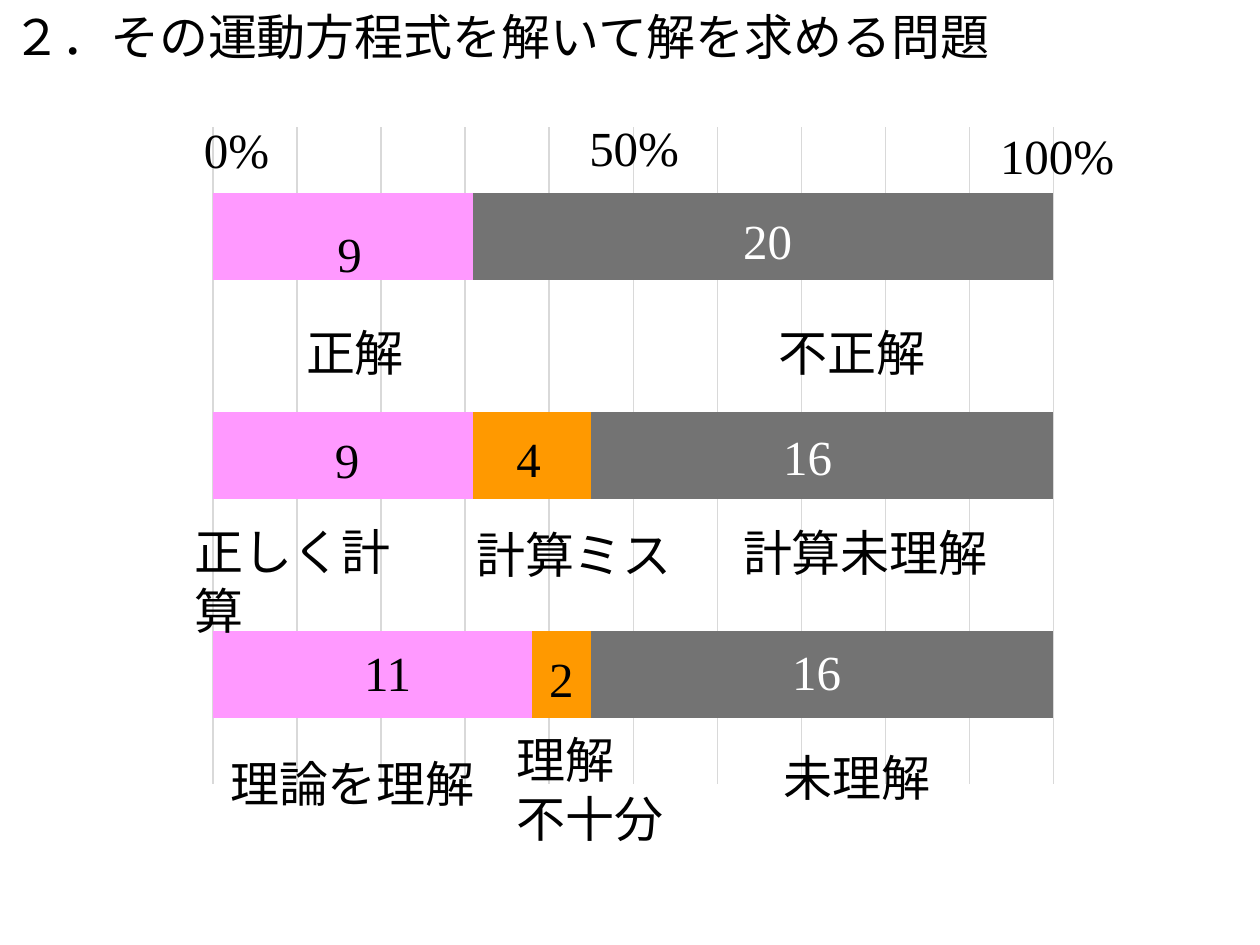
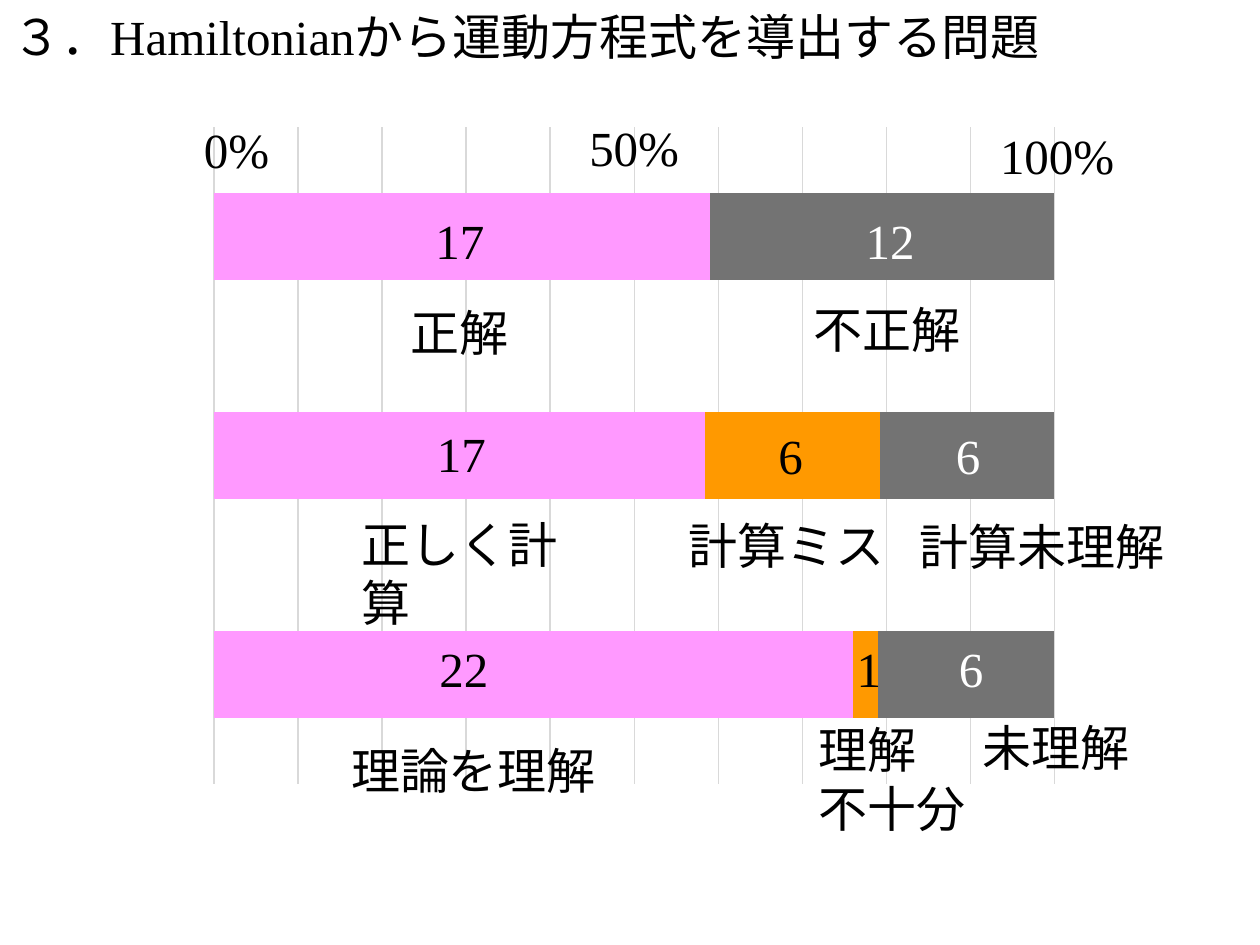
from pptx import Presentation
from pptx.chart.data import CategoryChartData
from pptx.dml.color import RGBColor
from pptx.enum.chart import XL_CHART_TYPE
from pptx.enum.lang import MSO_LANGUAGE_ID
from pptx.enum.text import MSO_AUTO_SIZE
from pptx.util import Cm, Pt

FONT = "Times New Roman"
BLACK, WHITE, GRID = "000000", "FFFFFF", "D9D9D9"
SERIES_COLOURS = ["FF99FF", "FF9900", "737373"]
BAR_NAMES = ["1", "2", "3"]

# Text and width of each answer label, bar by bar from the top
ANSWERS = [
    ("正解", 2.92), ("不正解", 3.99),
    ("正しく計算", 5.13), ("計算ミス", 4.57), ("計算未理解", 5.66),
    ("理論を理解", 6.4), ("理解\n不十分", 4.57), ("未理解", 3.78),
]
# Text, left, top and width of the scale marks
SCALE = [("0%", 3.86, 2.29, 2.21), ("50%", 11.63, 2.24, 2.72),
         ("100%", 19.91, 2.41, 3.02)]

# Shares run from the bottom bar up; counts are text, left, top from the top bar down
QUESTIONS = [
    dict(
        title="２．その運動方程式を解いて解を求める問題",
        chart_left=3.94,
        shares=[(38, 31, 31), (7, 14, 0), (55, 55, 69)],
        counts=[
            [("9", 6.55, 4.39), ("20", 14.73, 4.11)],
            [("9", 6.5, 8.53), ("4", 10.16, 8.51), ("16", 15.54, 8.48)],
            [("11", 7.09, 12.83), ("2", 10.82, 12.95), ("16", 15.72, 12.8)],
        ],
        answer_places=[
            (5.92, 6.38), (15.44, 6.38),
            (3.68, 10.39), (9.35, 10.44), (14.73, 10.41),
            (4.39, 15.06), (10.16, 14.58), (15.54, 14.94),
        ],
    ),
    dict(
        title="３．Hamiltonianから運動方程式を導出する問題",
        chart_left=3.96,
        shares=[(76, 59, 59), (3, 21, 0), (21, 21, 41)],
        counts=[
            [("17", 8.53, 4.11), ("12", 17.2, 4.11)],
            [("17", 8.56, 8.41), ("6", 15.44, 8.46), ("6", 19.02, 8.46)],
            [("22", 8.61, 12.75), ("1", 17.02, 12.75), ("6", 19.08, 12.75)],
        ],
        answer_places=[
            (8.03, 5.97), (16.15, 5.92),
            (7.04, 10.24), (13.64, 10.26), (18.29, 10.29),
            (6.83, 14.81), (16.26, 14.38), (19.56, 14.33),
        ],
    ),
]


def colour(hex_string):
    return RGBColor.from_string(hex_string)


def write(frame, text, size=28, ink=BLACK, font=FONT):
    """Fill a text frame, one paragraph for each line of text."""
    for number, line in enumerate(text.split("\n")):
        para = frame.add_paragraph() if number else frame.paragraphs[0]
        span = para.add_run()
        span.text = line
        span.font.name = font
        span.font.size = Pt(size)
        span.font.color.rgb = colour(ink)
        span.font.language_id = MSO_LANGUAGE_ID.JAPANESE


class SurveyDeck:
    def __init__(self):
        self.deck = Presentation()
        self.deck.slide_width, self.deck.slide_height = Cm(25.4), Cm(19.05)
        self.page = None

    def new_page(self):
        self.page = self.deck.slides.add_slide(self.deck.slide_layouts[6])

    def label(self, text, left, top, width, **style):
        height = 1.45 + 1.19 * text.count("\n")
        box = self.page.shapes.add_textbox(Cm(left), Cm(top), Cm(width), Cm(height))
        box.text_frame.word_wrap = True
        box.text_frame.auto_size = MSO_AUTO_SIZE.SHAPE_TO_FIT_TEXT
        write(box.text_frame, text, **style)

    def bars(self, left, shares):
        data = CategoryChartData()
        data.categories = BAR_NAMES
        for number, values in enumerate(shares, 1):
            data.add_series(f"Series {number}", values)
        chart = self.page.shapes.add_chart(
            XL_CHART_TYPE.BAR_STACKED_100, Cm(left), Cm(2.29), Cm(17.65), Cm(13.79), data
        ).chart
        chart.has_legend = chart.has_title = False
        chart.font.name, chart.font.size = FONT, Pt(10)
        chart.font.color.rgb = colour(BLACK)

        chart.category_axis.visible = chart.value_axis.visible = False
        chart.value_axis.has_major_gridlines = True
        grid = chart.value_axis.major_gridlines.format.line
        grid.color.rgb, grid.width = colour(GRID), Pt(0.75)

        plot = chart.plots[0]
        plot.gap_width, plot.overlap, plot.vary_by_categories = 150, 100, False
        for series, fill in zip(plot.series, SERIES_COLOURS):
            series.format.fill.solid()
            series.format.fill.fore_color.rgb = colour(fill)

    def question(self, title, chart_left, shares, counts, answer_places):
        self.new_page()
        self.bars(chart_left, shares)
        self.label(title, 0, 0, 21.59)
        # The last count of each bar stands on dark grey
        for bar in counts:
            for place in bar:
                self.label(*place, 1.63, ink=WHITE if place is bar[-1] else BLACK)
        for (text, width), (left, top) in zip(ANSWERS, answer_places):
            self.label(text, left, top, width)
        for mark in SCALE:
            self.label(*mark)


def main():
    survey = SurveyDeck()
    for question in QUESTIONS:
        survey.question(**question)
    survey.deck.save("out.pptx")


if __name__ == "__main__":
    main()
